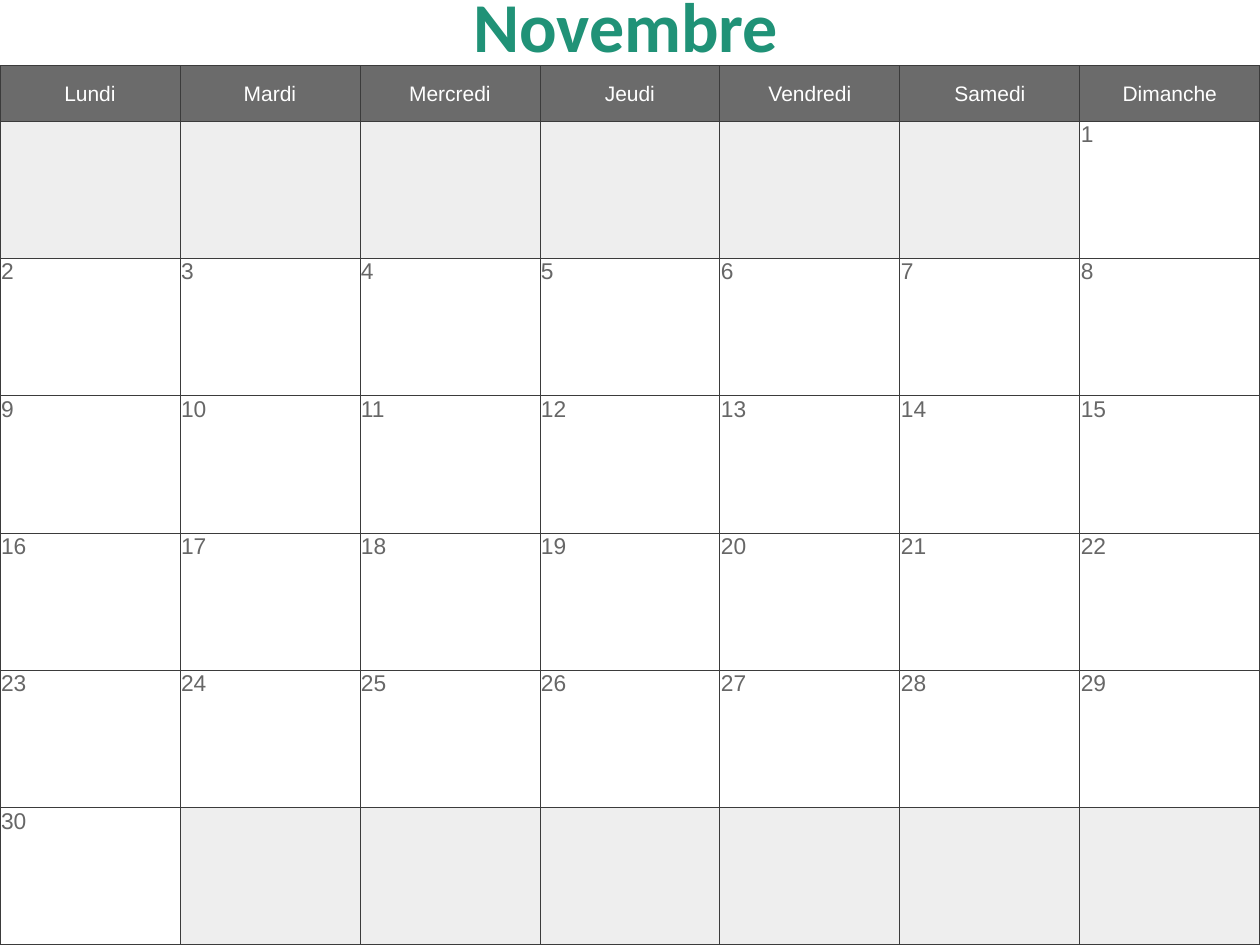
import dataclasses

import pptx
import pptx.dml.color
import pptx.enum.text
import pptx.oxml
import pptx.oxml.ns
import pptx.util

WEEKDAYS = ["Lundi", "Mardi", "Mercredi", "Jeudi", "Vendredi", "Samedi", "Dimanche"]
FIRST_WEEKDAY = 6
DAY_COUNT = 30
WEEK_COUNT = 6

SLIDE_WIDTH, SLIDE_HEIGHT = 720, 540
TABLE_TOP = 37.44
HEADER_HEIGHT = 31.7
WEEK_HEIGHT = (SLIDE_HEIGHT - TABLE_TOP - HEADER_HEIGHT) / WEEK_COUNT


@dataclasses.dataclass(frozen=True)
class Theme:
    title_font: str = "Calibri"
    body_font: str = "Arial"
    title_size: int = 40
    header_size: int = 12
    day_size: int = 13
    title_color: str = "209277"
    title_outline: str = "41193E"
    header_fill: str = "6B6B6B"
    header_text: str = "FFFFFF"
    day_fill: str = "FFFFFF"
    day_text: str = "676767"
    empty_fill: str = "EEEEEE"
    border: str = "3B3B3B"


def rgb(color):
    return pptx.dml.color.RGBColor.from_string(color)


def line_element(tag, color, width):
    return pptx.oxml.parse_xml(
        f'<a:{tag} {pptx.oxml.ns.nsdecls("a")} w="{pptx.util.Pt(width)}">'
        f'<a:solidFill><a:srgbClr val="{color}"/></a:solidFill></a:{tag}>'
    )


def write_text(text_frame, text, *, font, size, color, bold=False, centered=False):
    """Write one formatted paragraph and return its run."""
    paragraph = text_frame.paragraphs[0]
    alignment = pptx.enum.text.PP_ALIGN
    paragraph.alignment = alignment.CENTER if centered else alignment.LEFT
    run = paragraph.add_run()
    run.text = text
    run.font.name = font
    run.font.size = pptx.util.Pt(size)
    run.font.bold = bold
    run.font.color.rgb = rgb(color)
    return run


class CalendarSlide:
    """Holds the theme and the slide being filled."""

    def __init__(self, slide, theme):
        self.slide = slide
        self.theme = theme

    def add_title(self, text, left, top, width, height):
        title = self.slide.shapes.title
        title.left, title.top = pptx.util.Pt(left), pptx.util.Pt(top)
        title.width, title.height = pptx.util.Pt(width), pptx.util.Pt(height)
        frame = title.text_frame
        frame.word_wrap = False
        frame.auto_size = pptx.enum.text.MSO_AUTO_SIZE.SHAPE_TO_FIT_TEXT
        frame.vertical_anchor = pptx.enum.text.MSO_ANCHOR.TOP
        run = write_text(frame, text, font=self.theme.title_font,
                         size=self.theme.title_size, color=self.theme.title_color,
                         bold=True, centered=True)
        outline = line_element("ln", self.theme.title_outline, 1)
        run.font._element.insert(0, outline)

    def style_cell(self, cell, fill):
        cell.margin_left = cell.margin_right = cell.margin_top = pptx.util.Pt(0.6)
        cell.margin_bottom = 0
        cell.fill.solid()
        cell.fill.fore_color.rgb = rgb(fill)
        properties = cell._tc.get_or_add_tcPr()
        for index, side in enumerate(("lnL", "lnR", "lnT", "lnB")):
            properties.insert(index, line_element(side, self.theme.border, 0.5))

    def add_header_cell(self, cell, weekday):
        self.style_cell(cell, self.theme.header_fill)
        cell.vertical_anchor = pptx.enum.text.MSO_ANCHOR.MIDDLE
        write_text(cell.text_frame, weekday, font=self.theme.body_font,
                   size=self.theme.header_size, color=self.theme.header_text,
                   centered=True)

    def add_day_cell(self, cell, day):
        if not 1 <= day <= DAY_COUNT:
            self.style_cell(cell, self.theme.empty_fill)
            return
        self.style_cell(cell, self.theme.day_fill)
        write_text(cell.text_frame, str(day), font=self.theme.body_font,
                   size=self.theme.day_size, color=self.theme.day_text)

    def add_calendar(self):
        frame = self.slide.shapes.add_table(
            WEEK_COUNT + 1, len(WEEKDAYS), 0, pptx.util.Pt(TABLE_TOP),
            pptx.util.Pt(SLIDE_WIDTH), pptx.util.Pt(SLIDE_HEIGHT - TABLE_TOP))
        table = frame.table
        table.horz_banding = False
        table.first_row = False
        for column in table.columns:
            column.width = pptx.util.Pt(SLIDE_WIDTH / len(WEEKDAYS))
        for index, row in enumerate(table.rows):
            row.height = pptx.util.Pt(WEEK_HEIGHT if index else HEADER_HEIGHT)
        for column, weekday in enumerate(WEEKDAYS):
            self.add_header_cell(table.cell(0, column), weekday)
            for week in range(WEEK_COUNT):
                day = week * len(WEEKDAYS) + column - FIRST_WEEKDAY + 1
                self.add_day_cell(table.cell(week + 1, column), day)


def main():
    presentation = pptx.Presentation()
    presentation.slide_width = pptx.util.Pt(SLIDE_WIDTH)
    presentation.slide_height = pptx.util.Pt(SLIDE_HEIGHT)
    title_only = presentation.slide_layouts[5]
    calendar = CalendarSlide(presentation.slides.add_slide(title_only), Theme())
    calendar.add_title("Novembre", 262, -13.7, 191, 55.4)
    calendar.add_calendar()
    presentation.save("out.pptx")


if __name__ == "__main__":
    main()
